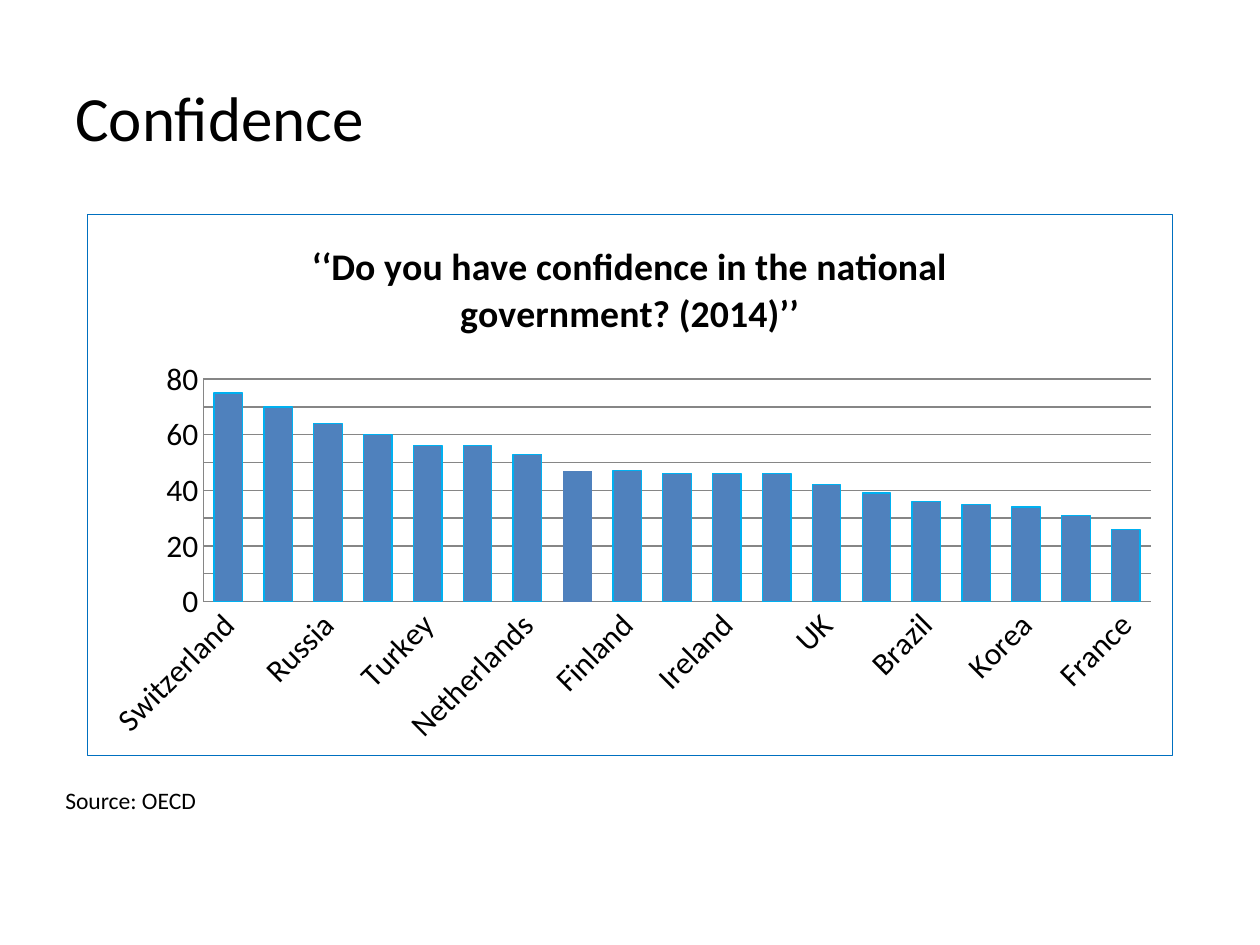
from lxml.etree import SubElement
from pptx import Presentation
from pptx.chart.data import CategoryChartData
from pptx.dml.color import RGBColor
from pptx.enum.chart import XL_CHART_TYPE, XL_TICK_MARK
from pptx.enum.text import MSO_ANCHOR
from pptx.oxml import parse_xml
from pptx.oxml.ns import nsdecls, qn
from pptx.util import Inches, Pt

COLORS = {
    "text": "000000",
    "bar": "4F81BD",
    "bar_line": "00B0F0",
    "border": "0070C0",
    "grid": "868686",
}
FONT = "Calibri"
CONFIDENCE = {
    "Switzerland": 75, "Norway": 70, "Russia": 64, "Germany": 60, "Turkey": 56,
    "Sweden": 56, "Netherlands": 53, "Belgium": 47, "Finland": 47, "Denmark": 46,
    "Ireland": 46, "Canada": 46, "UK": 42, "Japan": 39, "Brazil": 36,
    "USA": 35, "Korea": 34, "Italy": 31, "France": 26,
}


def write(text_frame, text, size, bold=False):
    paragraph = text_frame.paragraphs[0]
    run = paragraph.add_run()
    run.text = text
    run.font.name = FONT
    run.font.size = Pt(size)
    run.font.bold = bold
    run.font.color.rgb = RGBColor.from_string(COLORS["text"])


presentation = Presentation()
presentation.slide_width = Inches(10)
presentation.slide_height = Inches(7.5)
slide = presentation.slides.add_slide(presentation.slide_layouts[6])

for text, size, left, top, width, height, anchor in [
    ("Confidence", 36, 0.5, 0.3, 9, 1.25, MSO_ANCHOR.MIDDLE),
    ("Source: OECD", 13.5, 0.42, 6.19, 1.98, 0.33, MSO_ANCHOR.TOP),
]:
    shape = slide.shapes.add_textbox(Inches(left), Inches(top), Inches(width), Inches(height))
    shape.text_frame.word_wrap = True
    shape.text_frame.vertical_anchor = anchor
    write(shape.text_frame, text, size)

chart_data = CategoryChartData()
chart_data.categories = list(CONFIDENCE)
chart_data.add_series("Series 1", list(CONFIDENCE.values()))
chart = slide.shapes.add_chart(
    XL_CHART_TYPE.COLUMN_CLUSTERED,
    Inches(0.69), Inches(1.7), Inches(8.62), Inches(4.3), chart_data,
).chart
chart.has_legend = False
chart.font.name = FONT
chart.font.size = Pt(18)
chart.font.color.rgb = RGBColor.from_string(COLORS["text"])
chart.has_title = True
write(
    chart.chart_title.text_frame,
    "‘‘Do you have confidence in the national government? (2014)’’",
    21.6, bold=True,
)
chart.chart_title.include_in_layout = False

plot = chart.plots[0]
plot.gap_width = 75
plot.overlap = 40
plot.vary_by_categories = False
series = plot.series[0]
series.format.line.color.rgb = RGBColor.from_string(COLORS["bar_line"])
series.format.line.width = Pt(0.75)
belgium = series.points[list(CONFIDENCE).index("Belgium")]
for bar in (series, belgium):
    bar.format.fill.solid()
    bar.format.fill.fore_color.rgb = RGBColor.from_string(COLORS["bar"])

value_axis = chart.value_axis
value_axis.minimum_scale = 0
value_axis.maximum_scale = 80
value_axis.major_unit = 10
value_axis.has_major_gridlines = True
for axis in (chart.category_axis, value_axis):
    axis.major_tick_mark = XL_TICK_MARK.NONE
    axis.minor_tick_mark = XL_TICK_MARK.NONE
for line in (
    chart.category_axis.format.line,
    value_axis.format.line,
    value_axis.major_gridlines.format.line,
):
    line.color.rgb = RGBColor.from_string(COLORS["grid"])
    line.width = Pt(0.75)

border = parse_xml(f"<c:spPr {nsdecls('c', 'a')}><a:noFill/></c:spPr>")
outline = SubElement(border, qn("a:ln"), w=str(Pt(0.75)))
outline_fill = SubElement(outline, qn("a:solidFill"))
SubElement(outline_fill, qn("a:srgbClr"), val=COLORS["border"])
chart.element.find(qn("c:chart")).addnext(border)

presentation.save("out.pptx")
